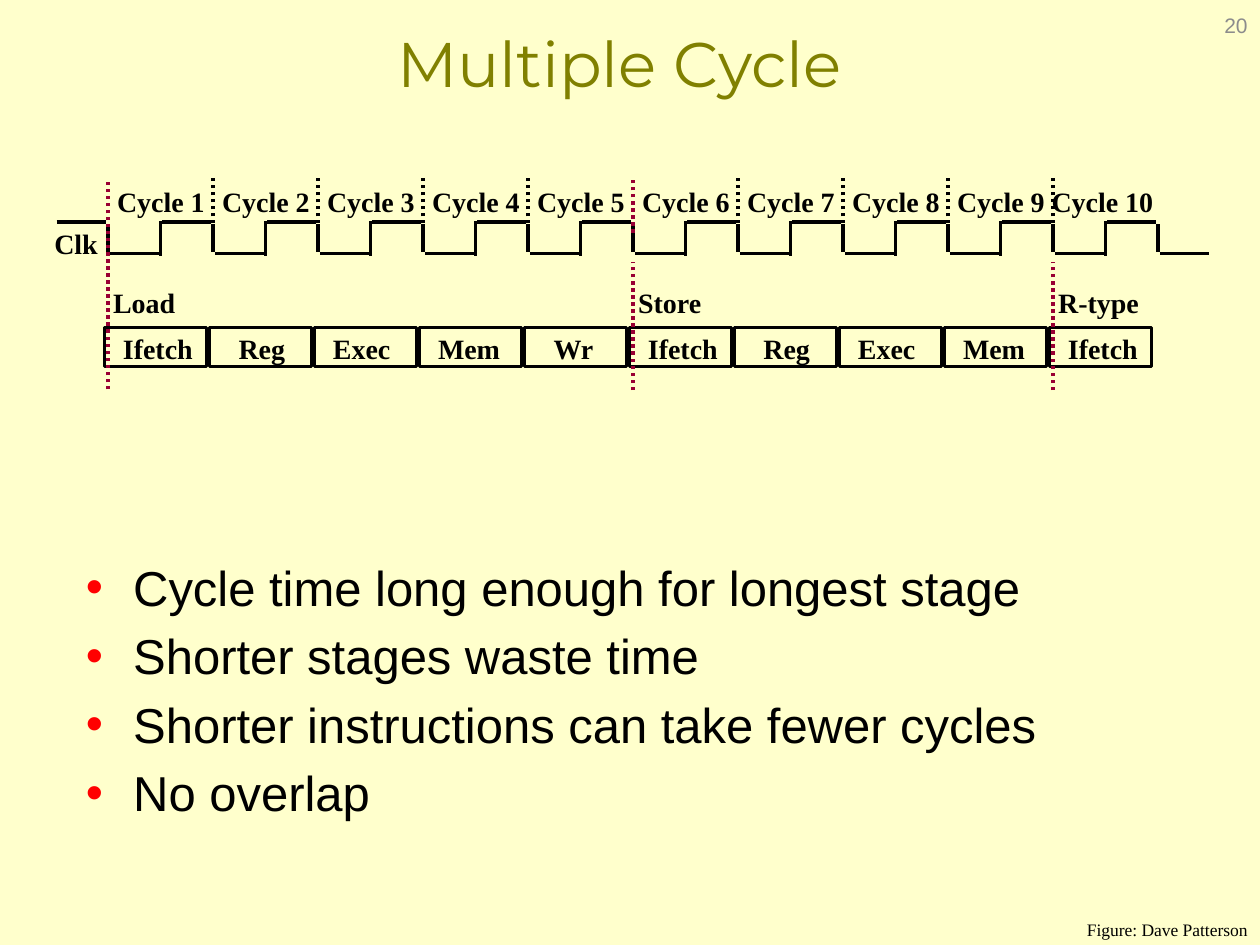
from lxml import etree
from pptx import Presentation
from pptx.dml.color import RGBColor
from pptx.enum import dml, shapes, text
from pptx.oxml import ns
from pptx.util import Pt

CREAM = RGBColor(0xFF, 0xFF, 0xCC)
OLIVE = RGBColor(0x80, 0x80, 0x00)
BLACK = RGBColor(0, 0, 0)
CRIMSON = RGBColor(0x99, 0x00, 0x33)
GRAY = RGBColor(0x8C, 0x8C, 0x8C)

SERIF = "Times New Roman"
LABEL = {"name": SERIF, "size": Pt(16), "bold": True}
LABEL_FRAME = {"word_wrap": False, "auto_size": text.MSO_AUTO_SIZE.SHAPE_TO_FIT_TEXT}
CYCLE = 60  # width of one clock cycle
CYCLE_COUNT = 10

# Stage name: (label offset inside its box, label width)
STAGES = {"Ifetch": (3.4, 54.6), "Reg": (9.4, 41.4), "Exec": (3.4, 47.4),
          "Mem": (3.4, 50.2), "Wr": (9.4, 37.8)}
# Instruction, label width, stages shown
INSTRUCTIONS = [("Load", 50, ["Ifetch", "Reg", "Exec", "Mem", "Wr"]),
                ("Store", 50.6, ["Ifetch", "Reg", "Exec", "Mem"]),
                ("R-type", 60.8, ["Ifetch"])]
POINTS = ["Cycle time long enough for longest stage", "Shorter stages waste time",
          "Shorter instructions can take fewer cycles", "No overlap"]


def add_text(slide, box, lines, font, color=BLACK, frame=None, paragraph=None):
    """Place lines of text in box, with dicts of font, frame and paragraph values."""
    area = slide.shapes.add_textbox(*map(Pt, box)).text_frame
    for key, value in {"word_wrap": True, **(frame or {})}.items():
        setattr(area, key, value)
    area.text = "\n".join(lines)
    for line in area.paragraphs:
        for key, value in (paragraph or {}).items():
            setattr(line, key, value)
        for key, value in font.items():
            setattr(line.runs[0].font, key, value)
        line.runs[0].font.color.rgb = color
    return area


def add_label(slide, x, y, width, words):
    add_text(slide, (x, y, width, 26), [words], LABEL, frame=LABEL_FRAME)


def add_line(slide, start, end, color=BLACK, dotted=False):
    line = slide.shapes.add_connector(shapes.MSO_CONNECTOR.STRAIGHT,
                                      *map(Pt, (*start, *end)))
    line.line.width = Pt(2)
    line.line.color.rgb = color
    if dotted:
        line.line.dash_style = dml.MSO_LINE.ROUND_DOT
    etree.SubElement(line._element.spPr, ns.qn("a:effectLst"))


def add_title(slide, box):
    add_text(slide, box, ["Multiple Cycle"], {"name": "Montserrat", "size": Pt(36)}, OLIVE,
             {"margin_top": Pt(2), "margin_bottom": Pt(2)},
             {"alignment": text.PP_ALIGN.CENTER})


def add_clock(slide, left, top):
    """Draw the clock wave, whose first falling edge is at left."""
    high, low = top + 25, top + 43
    add_label(slide, left - 37.8, top + 24, 39, "Clk")
    add_line(slide, (left - 29.5, high), (left - 1.5, high))
    for cycle in range(CYCLE_COUNT + 1):
        x = left + cycle * CYCLE
        add_line(slide, (x, high + 1.2), (x, low - 0.8))
        add_line(slide, (x + 1, low), (x + 29, low))
        if cycle == CYCLE_COUNT:
            break
        add_line(slide, (x + 30, low + 1.2), (x + 30, high - 0.8))
        add_line(slide, (x + 31, high), (x + 59, high))
        if cycle not in (0, 5):
            add_line(slide, (x, high + 0.7), (x, top - 0.5), dotted=True)
        shift, width = (-8, 73) if cycle == 9 else (-2, 65)
        add_label(slide, x + shift, top, width, f"Cycle {cycle + 1}")


def add_stage(slide, left, top, name):
    box = slide.shapes.add_shape(shapes.MSO_SHAPE.RECTANGLE,
                                 *map(Pt, (left, top, 58.3, 22.3)))
    box.shadow.inherit = False
    box.fill.background()
    box.line.color.rgb = BLACK
    box.line.width = Pt(2)
    offset, width = STAGES[name]
    add_label(slide, left + offset, top - 1.4, width, name)


def add_instructions(slide, left, top):
    """Lay the instructions end to end, one stage to a cycle."""
    x = left
    for instruction, width, stages in INSTRUCTIONS:
        add_label(slide, x - 4.2, top, width, instruction)
        for index, stage in enumerate(stages):
            add_stage(slide, x - 2 + index * CYCLE, top + 27.5, stage)
        x += len(stages) * CYCLE


def add_boundaries(slide, left, top):
    """Mark where each instruction starts."""
    store, r_type = left + 5 * CYCLE, left + 9 * CYCLE
    for x, start, end in [(left, 0, 120.5), (store, 0, 31),
                          (store, 47.5, 121), (r_type, 47.5, 121)]:
        add_line(slide, (x, top + end), (x, top + start), CRIMSON, dotted=True)


def add_points(slide, box):
    area = add_text(slide, box, POINTS, {"name": "Arial", "size": Pt(28)},
                    paragraph={"space_before": Pt(5.5)})
    for line in area.paragraphs:
        layout = line._p.get_or_add_pPr()
        layout.set("marL", str(Pt(27)))
        layout.set("indent", str(Pt(-27)))
        bullet_color = etree.SubElement(layout, ns.qn("a:buClr"))
        etree.SubElement(bullet_color, ns.qn("a:srgbClr"), val="FF0000")
        etree.SubElement(layout, ns.qn("a:buFont"), typeface="Arial")
        etree.SubElement(layout, ns.qn("a:buChar"), char="•")


def add_credit(slide, box):
    add_text(slide, box, ["Figure: Dave Patterson"], {"name": SERIF, "size": Pt(10)},
             frame={"word_wrap": False},
             paragraph={"alignment": text.PP_ALIGN.RIGHT, "line_spacing": 0.4})


def add_page_number(slide, box):
    add_text(slide, box, ["20"], {"name": "Arial", "size": Pt(12)}, GRAY,
             {"vertical_anchor": text.MSO_ANCHOR.MIDDLE},
             {"alignment": text.PP_ALIGN.RIGHT})


def main():
    deck = Presentation()
    deck.slide_width, deck.slide_height = Pt(720), Pt(540)
    slide = deck.slides.add_slide(deck.slide_layouts[6])
    slide.background.fill.solid()
    slide.background.fill.fore_color.rgb = CREAM
    add_title(slide, (42, 12, 624, 55))
    add_clock(slide, 61.8, 102)
    add_instructions(slide, 61.8, 159.7)
    add_boundaries(slide, 61.8, 102)
    add_points(slide, (42, 315, 624, 201))
    add_credit(slide, (613.5, 528, 106.5, 12))
    add_page_number(slide, (552, 0, 168, 29))
    deck.save("out.pptx")


if __name__ == "__main__":
    main()
